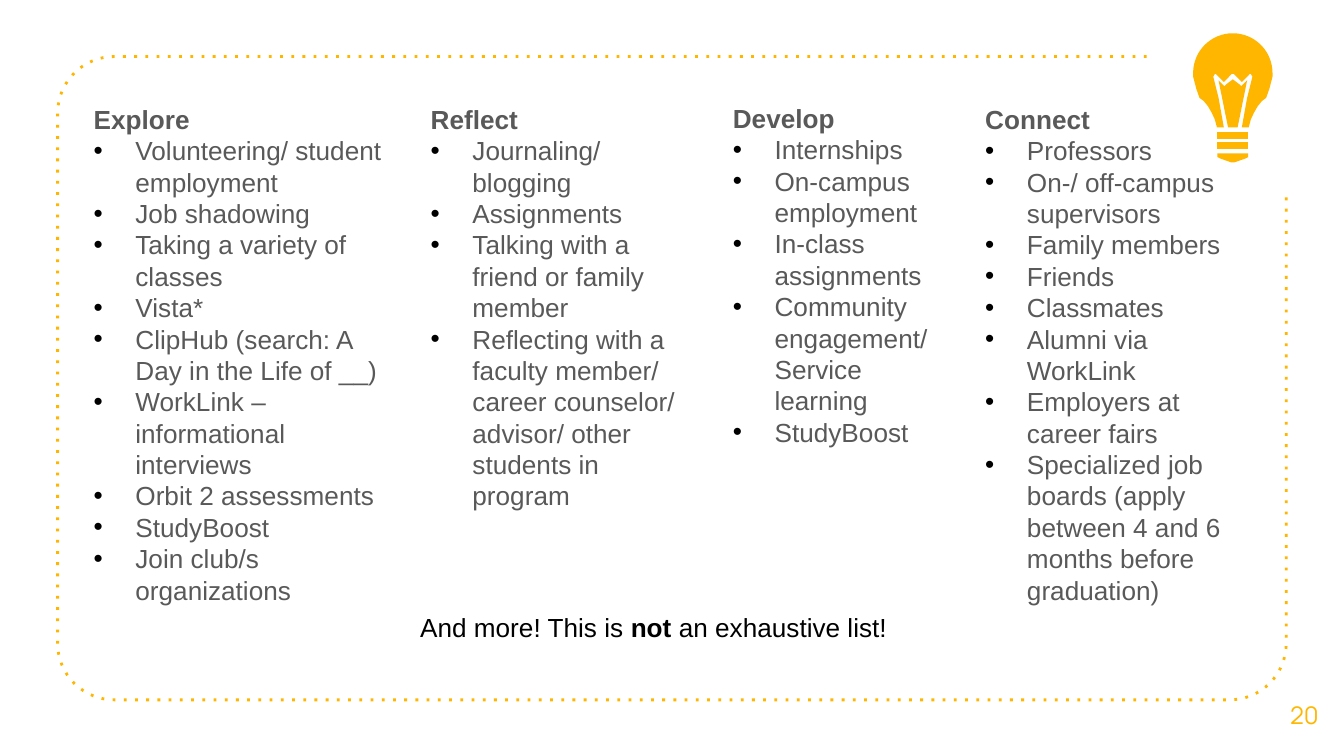
from math import cos, pi, sin

from lxml.etree import SubElement
from pptx import Presentation
from pptx.dml.color import RGBColor
from pptx.enum.text import MSO_ANCHOR as Anchor, MSO_AUTO_SIZE as AutoSize, PP_ALIGN as Align
from pptx.oxml.ns import qn
from pptx.util import Cm, Pt

AMBER = RGBColor(0xFF, 0xB6, 0x00)
GREY = RGBColor(0x59, 0x59, 0x59)
BLACK = RGBColor(0x00, 0x00, 0x00)

BULB_AXIS = 23.3  # cm from the left edge

# left, top, width, height in cm, heading, items
COLUMNS = [
    (1.52, 1.83, 6.17, 9.83, "Explore", [
        "Volunteering/ student employment", "Job shadowing",
        "Taking a variety of classes", "Vista*",
        "ClipHub (search: A Day in the Life of __)",
        "WorkLink – informational interviews", "Orbit 2 assessments",
        "StudyBoost", "Join club/s organizations"]),
    (7.89, 1.83, 5.23, 8.03, "Reflect", [
        "Journaling/ blogging", "Assignments",
        "Talking with a friend or family member",
        "Reflecting with a faculty member/ career counselor/ advisor/ "
        "other students in program"]),
    (13.6, 1.81, 4.29, 6.83, "Develop", [
        "Internships", "On-campus employment", "In-class assignments",
        "Community engagement/ Service learning", "StudyBoost"]),
    (18.37, 1.83, 5.23, 9.83, "Connect", [
        "Professors", "On-/ off-campus supervisors", "Family members",
        "Friends", "Classmates", "Alumni via WorkLink",
        "Employers at career fairs",
        "Specialized job boards (apply between 4 and 6 months before graduation)"]),
]


def arc(x, y, radius, start, end, steps=16):
    """Points along a circle, angles in degrees clockwise from the right."""
    angles = [(start + (end - start) * i / steps) * pi / 180 for i in range(steps + 1)]
    return [(x + radius * cos(a), y + radius * sin(a)) for a in angles]


def add_outline(shapes, points, close):
    points = [(Cm(x), Cm(y)) for x, y in points]
    builder = shapes.build_freeform(*points[0])
    builder.add_line_segments(points[1:], close=close)
    shape = builder.convert_to_shape()
    shape.shadow.inherit = False
    return shape


def add_frame(page):
    left, top, right, bottom, radius = 1.09, 1.07, 24.31, 13.23, 1.07
    points = [(21.67, top)]
    points += arc(left + radius, top + radius, radius, 270, 180)
    points += arc(left + radius, bottom - radius, radius, 180, 90)
    points += arc(right - radius, bottom - radius, radius, 90, 0)
    points.append((right, 3.71))
    frame = add_outline(page.shapes, points, close=False)
    frame.fill.background()
    frame.line.color.rgb = AMBER
    frame.line.width = Pt(1.5)
    SubElement(frame._element.spPr.find(qn("a:ln")), qn("a:prstDash"), val="dot")


def add_bulb(page):
    # Right half of each part: offset from the axis, then height on the page
    glass = arc(0, 1.38, 0.75, -90, 0) + [
        (0.75, 1.45), (0.69, 1.68), (0.63, 1.85), (0.55, 1.91), (0.47, 2.01),
        (0.4, 2.13), (0.34, 2.26), (0.3, 2.41), (0.17, 2.41), (0.27, 1.85),
        (0.37, 1.45), (0.34, 1.4), (0.32, 1.4), (0.3, 1.42), (0.17, 1.55),
        (0.02, 1.4)]
    filament = [(0, 1.5), (0.13, 1.6), (0.16, 1.63), (0.19, 1.6), (0.27, 1.52), (0.09, 2.41)]
    bands = [[(0.29, top), (0.29, top + 0.13)] for top in (2.69, 2.49)]
    cap = [(0.29, 2.9), (0.29, 2.97), (0.23, 3), (0.03, 3.07)]

    bulb = page.shapes.add_group_shape()
    for half in [*bands, cap, filament, glass]:
        points = [(BULB_AXIS + x, y) for x, y in half]
        points += [(BULB_AXIS - x, y) for x, y in reversed(half)]
        part = add_outline(bulb.shapes, points, close=True)
        part.fill.solid()
        part.fill.fore_color.rgb = AMBER
        part.line.fill.background()


def add_box(page, left, top, width, height):
    box = page.shapes.add_textbox(Cm(left), Cm(top), Cm(width), Cm(height))
    box.text_frame.word_wrap = True
    return box.text_frame


def add_span(para, text, color, size=14, font="Arial", bold=False):
    span = para.add_run()
    span.text = text
    span.font.name = font
    span.font.size = Pt(size)
    span.font.bold = bold
    span.font.color.rgb = color


def set_bullet(para):
    props = para._p.get_or_add_pPr()
    props.set("marL", str(Cm(0.79)))
    props.set("indent", str(-Cm(0.79)))
    color = SubElement(props, qn("a:buClr"))
    SubElement(color, qn("a:srgbClr"), val=str(BLACK))
    SubElement(props, qn("a:buFont"), typeface="Arial")
    SubElement(props, qn("a:buChar"), char="•")


def add_column(page, left, top, width, height, heading, items):
    frame = add_box(page, left, top, width, height)
    frame.auto_size = AutoSize.SHAPE_TO_FIT_TEXT
    add_span(frame.paragraphs[0], heading, GREY, bold=True)
    for item in items:
        para = frame.add_paragraph()
        set_bullet(para)
        add_span(para, item, GREY)


def add_closing(page):
    frame = add_box(page, 7.69, 11.44, 13.26, 0.86)
    frame.auto_size = AutoSize.SHAPE_TO_FIT_TEXT
    para = frame.paragraphs[0]
    add_span(para, "And more! This is ", BLACK)
    add_span(para, "not", BLACK, bold=True)
    add_span(para, " an exhaustive list!", BLACK)


def add_page_number(page):
    frame = add_box(page, 23.9, 12.75, 1.5, 1.52)
    frame.margin_top = frame.margin_bottom = Cm(0.25)
    frame.vertical_anchor = Anchor.MIDDLE
    para = frame.paragraphs[0]
    para.alignment = Align.CENTER
    add_span(para, "20", AMBER, size=13, font="Manrope")


def main():
    deck = Presentation()
    deck.slide_width, deck.slide_height = Cm(25.4), Cm(14.29)
    page = deck.slides.add_slide(deck.slide_layouts[6])

    # Decoration
    add_frame(page)
    add_page_number(page)
    add_bulb(page)

    # Text
    for column in COLUMNS:
        add_column(page, *column)
    add_closing(page)

    deck.save("out.pptx")


if __name__ == "__main__":
    main()
